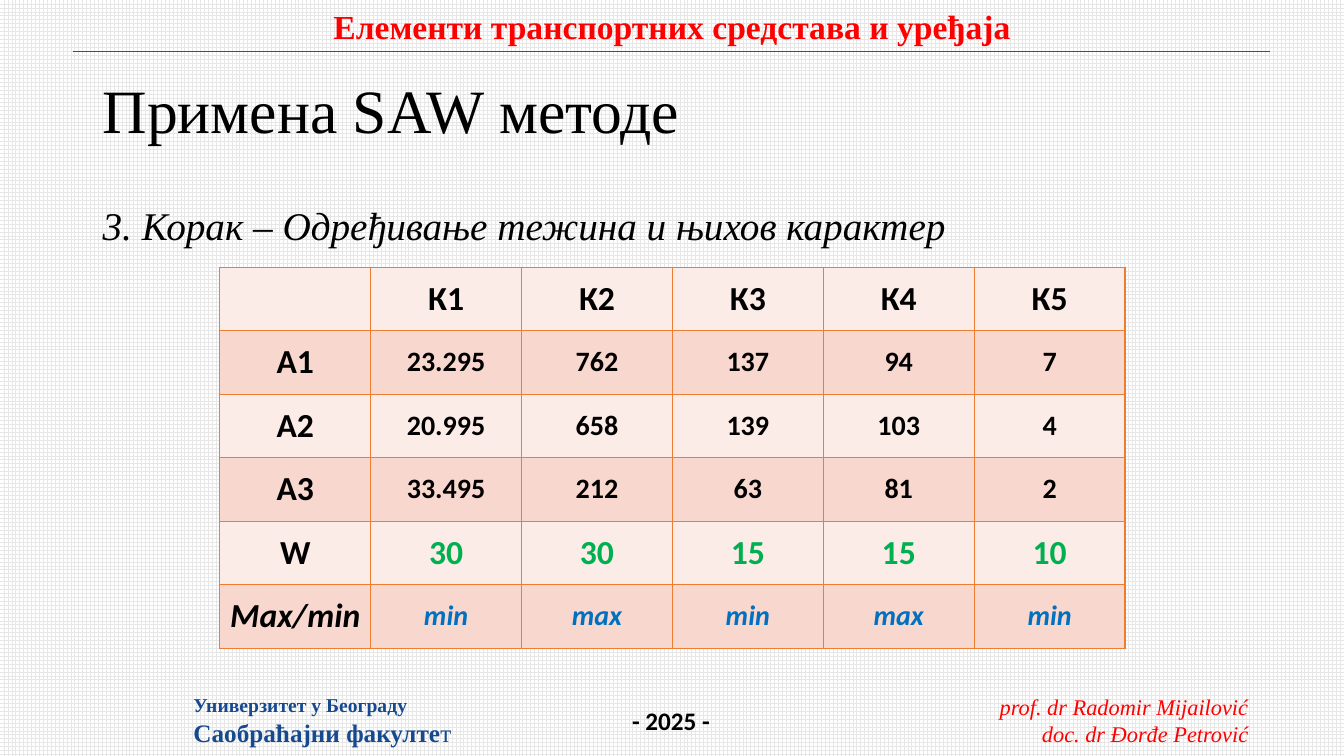
from pptx import Presentation
from pptx.util import Inches, Pt
from pptx.dml.color import RGBColor as Rgb
from pptx.enum.dml import MSO_PATTERN as Pattern
from pptx.enum.shapes import MSO_CONNECTOR as Link
from pptx.enum.text import MSO_ANCHOR as Anchor, MSO_AUTO_SIZE as Auto, PP_ALIGN as Align
from pptx.oxml import parse_xml
from pptx.oxml.ns import qn
from lxml import etree

COLORS = {
    "grid": "E7E6E6", "white": "FFFFFF", "red": "FF0000", "navy": "16498E",
    "black": "000000", "green": "00B050", "blue": "0070C0",
    "border": "ED7D31", "light": "FCECE8", "dark": "F8D7CE",
}
SERIF, SANS = "Times New Roman", "Calibri"
LEFT, MID, RIGHT = Align.LEFT, Align.CENTER, Align.RIGHT

STAFF = ["prof. dr Radomir Mijailović", "doc. dr Đorđe Petrović"]
HEADER = "Елементи транспортних средстава и уређаја"
YEAR = "- 2025 -"
SCHOOL = ["Универзитет у Београду", "Саобраћајни факулте"]
ENDING = "т"
TITLE = "Примена SAW методе"
STEP = "3. Корак – Одређивање тежина и њихов карактер"
ROWS = [
    ["", "К1", "К2", "К3", "К4", "К5"],
    ["А1", "23.295", "762", "137", "94", "7"],
    ["А2", "20.995", "658", "139", "103", "4"],
    ["А3", "33.495", "212", "63", "81", "2"],
    ["W", "30", "30", "15", "15", "10"],
    ["Max/min", "min", "max", "min", "max", "min"],
]
HEAD, WEIGHT, KIND = 0, 4, 5
TABLE = (2.18, 2.65, 8.98, 3.78)


def color(name):
    return Rgb.from_string(COLORS[name])


def style(run, face, size, tint, bold=False, slant=False):
    font = run.font
    font.name, font.size = face, Pt(size)
    font.bold, font.italic = bold, slant
    font.color.rgb = color(tint)


def add_text(slide, at, lines, look, align=LEFT, wrap=False, anchor=Anchor.TOP, space=None):
    frame = slide.shapes.add_textbox(*map(Inches, at)).text_frame
    frame.text = "\n".join(lines)
    frame.word_wrap = wrap
    frame.auto_size = Auto.NONE if wrap else Auto.SHAPE_TO_FIT_TEXT
    frame.vertical_anchor = anchor
    for para in frame.paragraphs:
        para.alignment = align
        para.line_spacing = space
        for run in para.runs:
            style(run, *look)
    return frame


def add_border(cell):
    props = cell._tc.get_or_add_tcPr()
    for i, side in enumerate(("lnL", "lnR", "lnT", "lnB")):
        props.insert(i, parse_xml(
            f'<a:{side} xmlns:a="http://schemas.openxmlformats.org/drawingml/2006/main" '
            f'w="12700"><a:solidFill><a:srgbClr val="{COLORS["border"]}"/>'
            f'</a:solidFill></a:{side}>'))


def cell_look(r, c):
    size = 24 if c == 0 or r in (HEAD, WEIGHT) else 20
    tint = {WEIGHT: "green", KIND: "blue"}.get(r, "black") if c else "black"
    return SANS, size, tint, True, r == KIND


def add_table(slide):
    count, width = len(ROWS), len(ROWS[0])
    table = slide.shapes.add_table(count, width, *map(Inches, TABLE)).table
    for r, row in enumerate(ROWS):
        for c, text in enumerate(row):
            cell = table.cell(r, c)
            cell.text = text
            cell.vertical_anchor = Anchor.MIDDLE
            cell.fill.solid()
            cell.fill.fore_color.rgb = color("dark" if r % 2 else "light")
            add_border(cell)
            para = cell.text_frame.paragraphs[0]
            para.alignment = MID
            for run in para.runs:
                style(run, *cell_look(r, c))


def main():
    deck = Presentation()
    deck.slide_width, deck.slide_height = Inches(13.33), Inches(7.5)
    slide = deck.slides.add_slide(deck.slide_layouts[6])
    back = slide.background.fill
    back.patterned()
    back.pattern = Pattern.LARGE_GRID
    back.fore_color.rgb, back.back_color.rgb = color("grid"), color("white")

    add_text(slide, (9.77, 6.83, 2.71, 0.64), STAFF, (SERIF, 16, "red", False, True), RIGHT)
    rule = slide.shapes.add_connector(Link.STRAIGHT, *map(Inches, (0.72, 0.51, 12.6, 0.51)))
    rule.line.color.rgb, rule.line.width = color("red"), Pt(0.5)
    etree.SubElement(rule._element.spPr, qn("a:effectLst"))
    add_text(slide, (3.17, 0.01, 6.99, 0.5), [HEADER], (SERIF, 24, "red", True), MID)
    add_text(slide, (6.17, 6.95, 0.98, 0.4), [YEAR], (SANS, 18, "black", True))

    school = add_text(slide, (1.82, 6.83, 2.79, 0.64), SCHOOL, (SERIF, 18, "navy", True))
    school.paragraphs[0].runs[0].font.size = Pt(14)
    tail = school.paragraphs[1].add_run()
    tail.text = ENDING
    style(tail, SERIF, 18, "navy")

    add_text(slide, (0.92, 0.4, 11.5, 1.45), [TITLE], (SERIF, 44, "black"),
             wrap=True, anchor=Anchor.MIDDLE, space=0.9)
    add_text(slide, (0.92, 2, 11.5, 4.76), [STEP], (SERIF, 28, "black", False, True),
             wrap=True, space=0.9)
    add_table(slide)
    deck.save("out.pptx")


if __name__ == "__main__":
    main()
